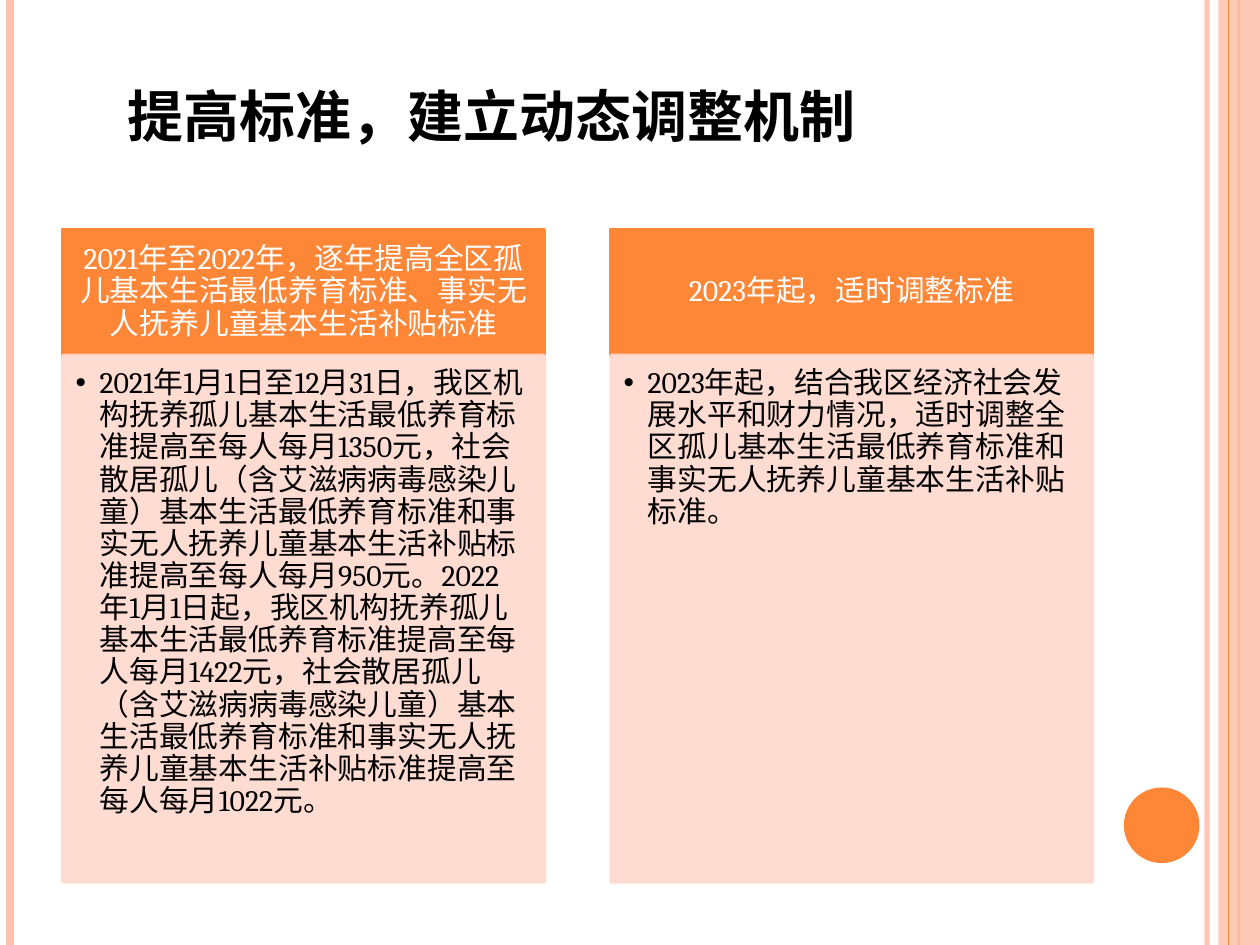
from lxml.etree import SubElement
from pptx import Presentation
from pptx.dml.color import RGBColor
from pptx.enum.shapes import MSO_CONNECTOR, MSO_SHAPE
from pptx.enum.text import MSO_ANCHOR, MSO_AUTO_SIZE, PP_ALIGN
from pptx.oxml.ns import qn
from pptx.util import Inches, Pt

ORANGE, PEACH, PINK = "FE8637", "FEC3AE", "FFD9CE"
WHITE, BLACK = "FFFFFF", "000000"

COLUMNS = [
    ("2021年至2022年，逐年提高全区孤儿基本生活最低养育标准、事实无人抚养儿童基本生活补贴标准",
     "2021年1月1日至12月31日，我区机构抚养孤儿基本生活最低养育标准提高至每人每月1350元，"
     "社会散居孤儿（含艾滋病病毒感染儿童）基本生活最低养育标准和事实无人抚养儿童基本生活补贴"
     "标准提高至每人每月950元。2022年1月1日起，我区机构抚养孤儿基本生活最低养育标准提高至"
     "每人每月1422元，社会散居孤儿（含艾滋病病毒感染儿童）基本生活最低养育标准和事实无人抚养"
     "儿童基本生活补贴标准提高至每人每月1022元。"),
    ("2023年起，适时调整标准",
     "2023年起，结合我区经济社会发展水平和财力情况，适时调整全区孤儿基本生活最低养育标准和"
     "事实无人抚养儿童基本生活补贴标准。"),
]


def rgb(value):
    return RGBColor.from_string(value)


class SlideBuilder:
    font = "Cambria"

    def __init__(self, slide):
        self.s = slide

    def paint(self, fill, color, alpha=100):
        """Solid fill for a shape or a line, with opacity in percent."""
        fill.solid()
        fill.fore_color.rgb = rgb(color)
        if alpha < 100:
            clr = next(fill._xPr.iter(qn("a:srgbClr")))
            SubElement(clr, qn("a:alpha"), val=str(alpha * 1000))

    def stripe(self, x, color, width, alpha=100):
        c = self.s.shapes.add_connector(
            MSO_CONNECTOR.STRAIGHT, Inches(x), 0, Inches(x), Inches(7.5))
        self.paint(c.line.fill, color, alpha)
        c.line.width = Pt(width)
        SubElement(c._element.spPr, qn("a:effectLst"))

    def shape(self, kind, box, color, alpha=100):
        sp = self.s.shapes.add_shape(kind, *map(Inches, box))
        sp.shadow.inherit = False
        self.paint(sp.fill, color, alpha)
        sp.line.fill.background()

    def text(self, idx, box, text, size, color, insets, anchor,
             align=PP_ALIGN.LEFT, bold=False, spacing=1.0, wrap=True):
        """Place and fill one of the layout's placeholders."""
        sp = self.s.placeholders[idx]
        sp.left, sp.top, sp.width, sp.height = map(Inches, box)
        tf = sp.text_frame
        tf.word_wrap, tf.auto_size = wrap, MSO_AUTO_SIZE.NONE
        tf.vertical_anchor = anchor
        (tf.margin_left, tf.margin_top,
         tf.margin_right, tf.margin_bottom) = map(Inches, insets)
        p = tf.paragraphs[0]
        p.alignment, p.line_spacing = align, spacing
        p.space_before = Pt(0)
        r = p.add_run()
        r.text = text
        r.font.name, r.font.size, r.font.bold = self.font, Pt(size), bold
        r.font.color.rgb = rgb(color)
        return sp

    def panel(self, sp, color, alpha=100):
        self.paint(sp.fill, color, alpha)
        self.paint(sp.line.fill, color, alpha)
        sp.line.width = Pt(2)

    def title(self, text):
        self.text(0, (0.91, 0.6, 6.06, 0.64), text, 32, BLACK,
                  (0.1, 0.05, 0.1, 0.05), MSO_ANCHOR.TOP, bold=True, wrap=False)

    def header(self, idx, x, text):
        sp = self.text(idx, (x, 1.82, 3.82, 1), text, 17, WHITE,
                       (0.13, 0.08, 0.13, 0.08), MSO_ANCHOR.MIDDLE,
                       PP_ALIGN.CENTER, spacing=0.9)
        self.panel(sp, ORANGE)

    def bullet_list(self, idx, x, text):
        sp = self.text(idx, (x, 2.82, 3.82, 4.18), text, 17, BLACK,
                       (0.1, 0.1, 0.13, 0.15), MSO_ANCHOR.TOP, spacing=0.9)
        self.panel(sp, PINK, 90)
        pPr = sp.text_frame.paragraphs[0]._p.get_or_add_pPr()
        pPr.set("marL", str(Inches(0.19)))
        pPr.set("indent", str(-Inches(0.19)))
        SubElement(pPr, qn("a:buChar"), char="•")


def main():
    prs = Presentation()
    prs.slide_width, prs.slide_height = Inches(10), Inches(7.5)
    comparison = prs.slide_layouts[4]
    b = SlideBuilder(prs.slides.add_slide(comparison))

    # Edge decoration
    b.stripe(9.58, PEACH, 3, 93)
    b.stripe(0.08, PEACH, 4.5)
    b.stripe(9.83, ORANGE, 1.5)
    b.shape(MSO_SHAPE.RECTANGLE, (9.67, 0, 0.33, 7.5), PEACH, 87)
    b.stripe(9.75, ORANGE, 0.75)
    b.shape(MSO_SHAPE.OVAL, (8.92, 6.25, 0.6, 0.6), ORANGE)

    # Title and the two columns
    b.title("提高标准，建立动态调整机制")
    for i, (heading, body) in enumerate(COLUMNS):
        x = 0.5 + 4.35 * i
        b.header(1 + 2 * i, x, heading)
        b.bullet_list(2 + 2 * i, x, body)

    prs.save("out.pptx")


if __name__ == "__main__":
    main()
